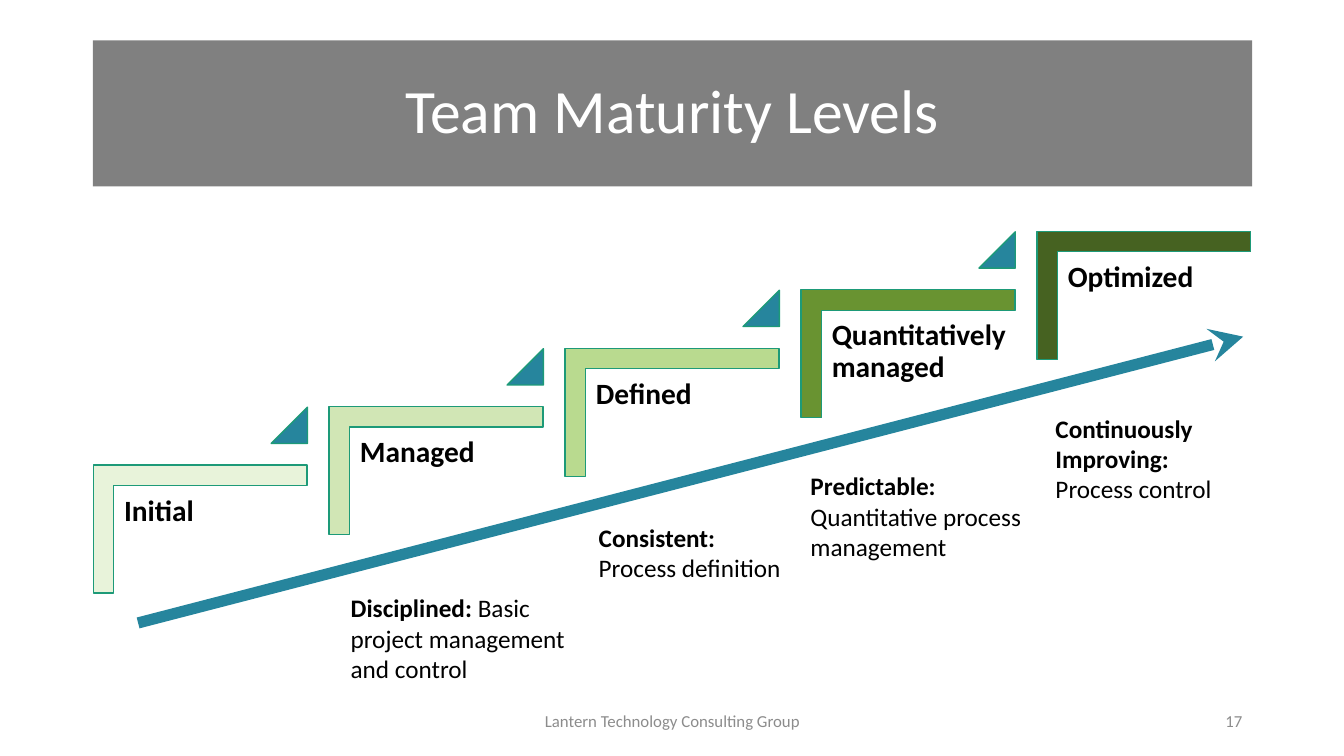
from lxml import etree
from pptx import Presentation
from pptx.dml.color import RGBColor
from pptx.enum.shapes import MSO_CONNECTOR, MSO_SHAPE
from pptx.enum.text import MSO_ANCHOR, PP_ALIGN
from pptx.oxml.ns import qn
from pptx.util import Inches, Pt

FONT = "Calibri"
WHITE = RGBColor(0xFF, 0xFF, 0xFF)
BLACK = RGBColor(0x00, 0x00, 0x00)
BANNER_GRAY = RGBColor(0x80, 0x80, 0x80)
FOOTER_GRAY = RGBColor(0x8C, 0x8C, 0x8C)
TEAL = RGBColor(0x26, 0x85, 0x9D)
OUTLINE_GREEN = RGBColor(0x1D, 0x9A, 0x78)

LEVELS = [
    ("Initial", RGBColor(0xE8, 0xF3, 0xDA)),
    ("Managed", RGBColor(0xD1, 0xE6, 0xB5)),
    ("Defined", RGBColor(0xB9, 0xDA, 0x8F)),
    ("Quantitatively managed", RGBColor(0x69, 0x93, 0x31)),
    ("Optimized", RGBColor(0x46, 0x62, 0x21)),
]
DESCRIPTIONS = [
    ("Disciplined:", " Basic project management and control", 3.38, 5.83, 2.7, 1.01),
    ("Consistent:", " Process definition", 5.84, 5.13, 2.03, 0.71),
    ("Predictable:", " Quantitative process management", 7.94, 4.62, 2.59, 1.01),
    ("Continuously Improving:", " Process control", 10.37, 4.05, 2.12, 1.01),
]
FIRST_LEFT, FIRST_TOP = 1.35, 4.19
STEP_RIGHT, STEP_UP = 2.34, 0.58

deck = Presentation()
deck.slide_width, deck.slide_height = Inches(13.33), Inches(7.5)
page = deck.slides.add_slide(deck.slide_layouts[5])


def add_text(spans, left, top, width, height, size=18, color=BLACK,
             align=PP_ALIGN.LEFT, anchor=MSO_ANCHOR.TOP, spacing=1.0, inset=None):
    """Add a wrapping text box; spans is a list of (text, bold) pairs."""
    box = page.shapes.add_textbox(Inches(left), Inches(top), Inches(width), Inches(height))
    frame = box.text_frame
    frame.word_wrap = True
    frame.vertical_anchor = anchor
    if inset is not None:
        frame.margin_left = frame.margin_right = Inches(inset)
        frame.margin_top = frame.margin_bottom = Inches(inset)
    para = frame.paragraphs[0]
    para.alignment = align
    para.line_spacing = spacing
    for text, bold in spans:
        span = para.add_run()
        span.text = text
        span.font.name = FONT
        span.font.size = Pt(size)
        span.font.bold = bold
        span.font.color.rgb = color


def add_outlined(preset, left, top, width, height, fill, adjustments):
    shape = page.shapes.add_shape(preset, Inches(left), Inches(top), Inches(width), Inches(height))
    shape.shadow.inherit = False
    shape.fill.solid()
    shape.fill.fore_color.rgb = fill
    shape.line.color.rgb = OUTLINE_GREEN
    shape.line.width = Pt(1)
    for index, value in enumerate(adjustments):
        shape.adjustments[index] = value
    return shape


# Title banner
title = page.shapes.title
title.left, title.top = Inches(0.92), Inches(0.4)
title.width, title.height = Inches(11.5), Inches(1.45)
title.fill.solid()
title.fill.fore_color.rgb = BANNER_GRAY
title.text_frame.text = "Team Maturity Levels"
title.text_frame.vertical_anchor = MSO_ANCHOR.MIDDLE
heading = title.text_frame.paragraphs[0]
heading.alignment = PP_ALIGN.CENTER
heading.line_spacing = 0.9
heading.runs[0].font.name = FONT
heading.runs[0].font.size = Pt(44)
heading.runs[0].font.color.rgb = WHITE

# Footer
add_text([("Lantern Technology Consulting Group", False)], 4.42, 6.95, 4.5, 0.4, size=12,
         color=FOOTER_GRAY, align=PP_ALIGN.CENTER, anchor=MSO_ANCHOR.MIDDLE)
add_text([("17", False)], 9.42, 6.95, 3, 0.4, size=12,
         color=FOOTER_GRAY, align=PP_ALIGN.RIGHT, anchor=MSO_ANCHOR.MIDDLE)

# Staircase of maturity levels
for number, (level, color) in enumerate(LEVELS):
    left = FIRST_LEFT + number * STEP_RIGHT
    top = FIRST_TOP - number * STEP_UP
    corner = add_outlined(MSO_SHAPE.CORNER, left, top, 1.27, 2.12, color, [0.16, 0.16])
    corner.rotation = 90
    add_text([(level, True)], left - 0.21, top + 0.64, 1.91, 1.68,
             size=21, spacing=0.9, inset=0.09)
    if number < len(LEVELS) - 1:
        add_outlined(MSO_SHAPE.ISOSCELES_TRIANGLE, left + 1.34, top - 0.15, 0.36, 0.36, TEAL, [1])

# Descriptions below the arrow
for label, detail, left, top, width, height in DESCRIPTIONS:
    add_text([(label, True), (detail, False)], left, top, width, height)

# Rising arrow
arrow = page.shapes.add_connector(MSO_CONNECTOR.STRAIGHT, Inches(1.37), Inches(6.18),
                                  Inches(12.33), Inches(3.34))
arrow.line.color.rgb = TEAL
arrow.line.width = Pt(8)
etree.SubElement(arrow.line._get_or_add_ln(), qn("a:tailEnd"), type="stealth")
etree.SubElement(arrow._element.spPr, qn("a:effectLst"))

deck.save("out.pptx")
